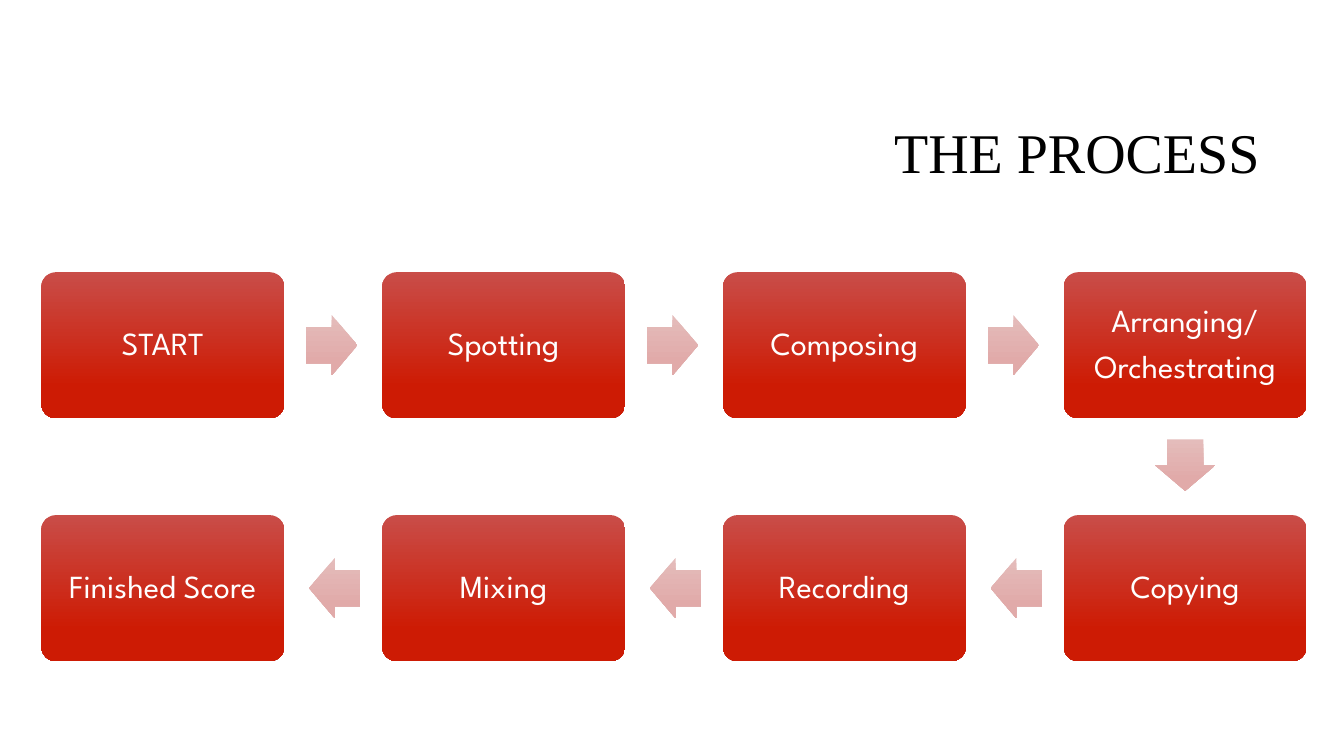
import pptx
import pptx.dml.color
import pptx.enum.shapes
import pptx.enum.text
import pptx.util

Inches = pptx.util.Inches
SHAPES = pptx.enum.shapes.MSO_SHAPE
ALIGN = pptx.enum.text.PP_ALIGN

LEFT, TOP = 0.41, 2.7
COLUMN_PITCH, ROW_PITCH = 3.38, 2.41
BOX_WIDTH, BOX_HEIGHT = 2.41, 1.45
ARROW_LENGTH, ARROW_BREADTH = 0.51, 0.6
ARROW_SETBACK = 0.015
COLUMNS = 4
STEPS = ["START", "Spotting", "Composing", "Arranging/\nOrchestrating",
         "Copying", "Recording", "Mixing", "Finished Score"]


def color(value):
    return pptx.dml.color.RGBColor.from_string(value)


def step_center(index):
    row, column = divmod(index, COLUMNS)
    if row % 2:
        column = COLUMNS - 1 - column
    return (LEFT + column * COLUMN_PITCH + BOX_WIDTH / 2,
            TOP + row * ROW_PITCH + BOX_HEIGHT / 2)


def write_text(shape, text, size, font_name, font_color, alignment, margin, space_after=0):
    frame = shape.text_frame
    frame.word_wrap = True
    frame.vertical_anchor = pptx.enum.text.MSO_ANCHOR.MIDDLE
    frame.margin_left = frame.margin_right = Inches(margin)
    frame.margin_top = frame.margin_bottom = Inches(margin)
    frame.text = text
    for paragraph in frame.paragraphs:
        paragraph.alignment = alignment
        paragraph.line_spacing = 0.9
        paragraph.space_after = pptx.util.Pt(space_after)
        paragraph.font.size = pptx.util.Pt(size)
        paragraph.font.name = font_name
        paragraph.font.color.rgb = color(font_color)


def add_gradient_shape(slide, kind, center, width, height, adjustments, colors):
    shape = slide.shapes.add_shape(
        kind, Inches(center[0] - width / 2), Inches(center[1] - height / 2),
        Inches(width), Inches(height))
    for index, adjustment in enumerate(adjustments):
        shape.adjustments[index] = adjustment
    shape.shadow.inherit = False
    shape.line.fill.background()
    shape.fill.gradient()
    shape.fill.gradient_angle = 270
    for stop, position, value in zip(shape.fill.gradient_stops, (0, 0.78), colors):
        stop.position = position
        stop.color.rgb = color(value)
    return shape


def add_title(slide, text):
    title = slide.shapes.add_textbox(Inches(3.17), Inches(0.84), Inches(9.42), Inches(1.41))
    write_text(title, text, 40, "Times New Roman", "000000", ALIGN.RIGHT, 0.1)


def add_step(slide, index, text):
    box = add_gradient_shape(slide, SHAPES.ROUNDED_RECTANGLE, step_center(index),
                             BOX_WIDTH, BOX_HEIGHT, [0.1], ("C94D48", "CD1B04"))
    write_text(box, text, 23, "League Spartan", "FFFFFF", ALIGN.CENTER, 0.14, 8)


def add_arrow(slide, index):
    start_x, start_y = step_center(index)
    end_x, end_y = step_center(index + 1)
    if end_y > start_y:
        rotation, step_x, step_y = 90, 0, 1
    elif end_x > start_x:
        rotation, step_x, step_y = 0, 1, 0
    else:
        rotation, step_x, step_y = 180, -1, 0
    center = ((start_x + end_x) / 2 - step_x * ARROW_SETBACK,
              (start_y + end_y) / 2 - step_y * ARROW_SETBACK)
    arrow = add_gradient_shape(slide, SHAPES.RIGHT_ARROW, center, ARROW_LENGTH,
                               ARROW_BREADTH, [0.6, 0.5], ("E4BCBB", "E1AAA9"))
    arrow.rotation = rotation
    arrow.element.spPr.find(pptx.oxml.ns.qn("a:gradFill")).set("rotWithShape", "0")


def main():
    presentation = pptx.Presentation()
    presentation.slide_width = Inches(13.33)
    presentation.slide_height = Inches(7.5)
    slide = presentation.slides.add_slide(presentation.slide_layouts[6])
    add_title(slide, "THE PROCESS")
    for index, text in enumerate(STEPS):
        add_step(slide, index, text)
        if index < len(STEPS) - 1:
            add_arrow(slide, index)
    presentation.save("out.pptx")


if __name__ == "__main__":
    main()
